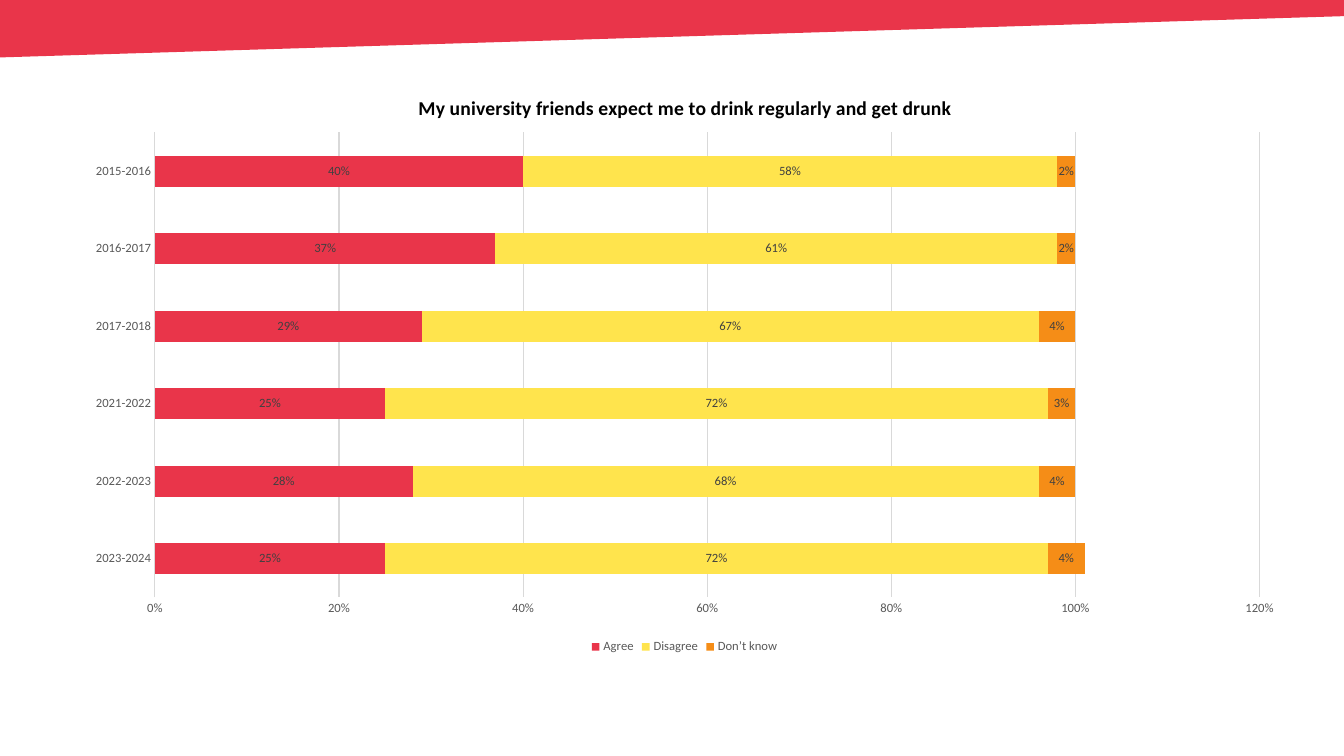
from pptx import Presentation
from pptx.chart.data import CategoryChartData
from pptx.dml.color import RGBColor
from pptx.enum.chart import XL_CHART_TYPE as ChartType
from pptx.enum.chart import XL_LABEL_POSITION as LabelPosition
from pptx.enum.chart import XL_LEGEND_POSITION as LegendPosition
from pptx.enum.chart import XL_TICK_MARK as TickMark
from pptx.oxml.ns import qn
from pptx.util import Inches, Pt
from lxml.etree import SubElement

TITLE = "My university friends expect me to drink regularly and get drunk"
YEARS = ["2023-2024", "2022-2023", "2021-2022", "2017-2018", "2016-2017", "2015-2016"]
ANSWERS = [
    ("Agree", "E9354A", [0.25, 0.28, 0.25, 0.29, 0.37, 0.40]),
    ("Disagree", "FFE44D", [0.72, 0.68, 0.72, 0.67, 0.61, 0.58]),
    ("Don’t know", "F58D17", [0.04, 0.04, 0.03, 0.04, 0.02, 0.02]),
]
BAND = [(-0.01, 0), (0, 0.57), (13.35, 0.16), (13.33, 0)]
CHART_BOX = (0.71, 0.67, 12.16, 5.86)
TITLE_LAYOUT = {"xMode": "edge", "yMode": "edge", "x": 0.28, "y": 0.04}
PLOT_LAYOUT = {"layoutTarget": "inner", "xMode": "edge", "yMode": "edge",
               "x": 0.068, "y": 0.11, "w": 0.901, "h": 0.787}
GREY, LABEL_GREY, GRID_GREY = "595959", "404040", "D9D9D9"


def rgb(code):
    return RGBColor.from_string(code)


def style_font(font, size, color, bold=False):
    for key, value in {"name": "Calibri", "size": Pt(size), "bold": bold}.items():
        setattr(font, key, value)
    font.color.rgb = rgb(color)


def style_line(line):
    line.color.rgb = rgb(GRID_GREY)
    line.width = Pt(0.75)


def place(layout, values):
    """Fill a chart layout element with fractions of the chart's size."""
    manual = SubElement(layout, qn("c:manualLayout"))
    for key, value in values.items():
        SubElement(manual, qn(f"c:{key}")).set("val", str(value))


def add_band(slide):
    points = [(Inches(x), Inches(y)) for x, y in BAND]
    builder = slide.shapes.build_freeform(*points[0])
    builder.add_line_segments(points[1:], close=True)
    band = builder.convert_to_shape()
    band.shadow.inherit = False
    band.fill.solid()
    band.fill.fore_color.rgb = rgb("E9354A")
    band.line.fill.background()


def add_answers_chart(slide):
    data = CategoryChartData(number_format="0%")
    data.categories = YEARS
    for name, _, shares in ANSWERS:
        data.add_series(name, shares)
    chart = slide.shapes.add_chart(
        ChartType.BAR_STACKED, *map(Inches, CHART_BOX), data).chart
    style_font(chart.font, 10, "000000")

    chart.has_title = True
    heading = chart.chart_title.text_frame
    heading.text = TITLE
    style_font(heading.paragraphs[0].runs[0].font, 14, "000000", bold=True)
    title = chart.chart_title._element
    place(title.find(qn("c:layout")), TITLE_LAYOUT)

    plot_area = title.getparent().find(qn("c:plotArea"))
    layout = plot_area.find(qn("c:layout"))
    if layout is None:
        layout = SubElement(plot_area, qn("c:layout"))
        plot_area.insert(0, layout)
    place(layout, PLOT_LAYOUT)

    chart.has_legend = True
    chart.legend.position = LegendPosition.BOTTOM
    chart.legend.include_in_layout = False
    style_font(chart.legend.font, 9, GREY)

    years, shares = chart.category_axis, chart.value_axis
    for axis in (years, shares):
        axis.major_tick_mark = axis.minor_tick_mark = TickMark.NONE
        style_font(axis.tick_labels.font, 9, GREY)
    style_line(years.format.line)
    shares.format.line.fill.background()
    style_line(shares.major_gridlines.format.line)
    for key, value in {"minimum_scale": 0, "maximum_scale": 1.2, "major_unit": 0.2}.items():
        setattr(shares, key, value)
    shares.tick_labels.number_format = "0%"
    shares.tick_labels.number_format_is_linked = False

    plot = chart.plots[0]
    for key, value in {"gap_width": 150, "overlap": 100, "vary_by_categories": False}.items():
        setattr(plot, key, value)
    for series, (_, color, _) in zip(plot.series, ANSWERS):
        series.format.fill.solid()
        series.format.fill.fore_color.rgb = rgb(color)
        labels = series.data_labels
        for key, value in {"show_value": True, "number_format": "0%",
                           "number_format_is_linked": False,
                           "position": LabelPosition.CENTER}.items():
            setattr(labels, key, value)
        style_font(labels.font, 9, LABEL_GREY)


def main():
    deck = Presentation()
    deck.slide_width, deck.slide_height = Inches(13.33), Inches(7.5)
    slide = deck.slides.add_slide(deck.slide_layouts[6])
    add_band(slide)
    add_answers_chart(slide)
    deck.save("out.pptx")


if __name__ == "__main__":
    main()
